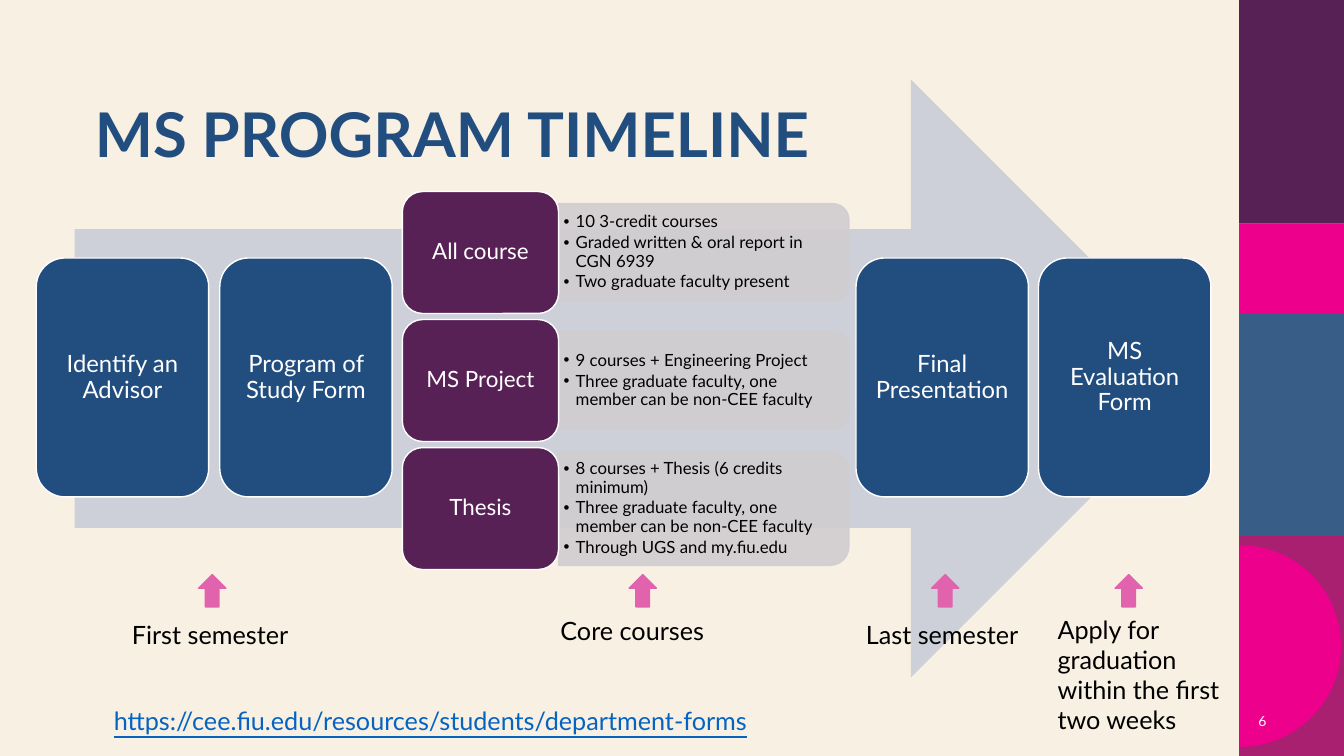
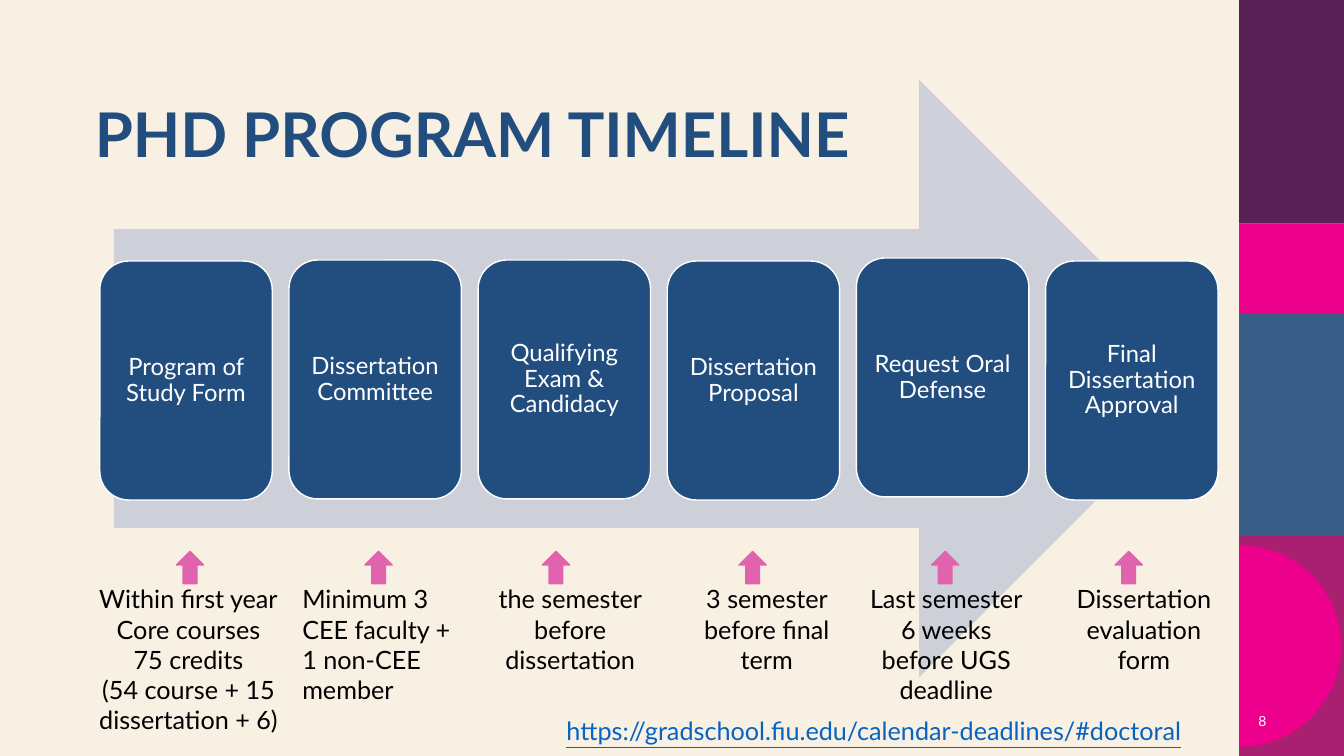
import math
from lxml import etree
from pptx import Presentation
from pptx import util as u
from pptx.dml.color import RGBColor
from pptx.enum import shapes, text
from pptx.oxml.ns import qn

WIDTH, HEIGHT = 13.33, 7.5
FONT = "Lato"
CREAM, NAVY, PLUM, MAGENTA = "F8F0E3", "224E7F", "582156", "EC008C"
STEEL, BERRY, ROSE, MIST = "385E88", "AA2070", "E263AD", "CDD0D8"
STONE, LINK, WHITE, BLACK = "D1CDD1", "0563C1", "FFFFFF", "000000"
LEFT, CENTER, RIGHT = text.PP_ALIGN.LEFT, text.PP_ALIGN.CENTER, text.PP_ALIGN.RIGHT
TOP, MIDDLE = text.MSO_ANCHOR.TOP, text.MSO_ANCHOR.MIDDLE
SHAPE = shapes.MSO_SHAPE
CARD_W, CARD_H = 1.71, 2.37
POINTER_W, POINTER_H = 0.27, 0.32


def color(hex_string):
    return RGBColor.from_string(hex_string)


def paint(part, fill, line=None):
    part.shadow.inherit = False
    part.fill.solid()
    part.fill.fore_color.rgb = color(fill)
    if line:
        part.line.color.rgb = color(line)
        part.line.width = u.Pt(1)
    else:
        part.line.fill.background()
    return part


def add_preset(slide, preset, box, fill, line=None):
    part = slide.shapes.add_shape(preset, *map(u.Inches, box))
    return paint(part, fill, line)


def set_opacity(part, percent):
    for rgb in part.fill._xPr.iter(qn("a:srgbClr")):
        etree.SubElement(rgb, qn("a:alpha")).set("val", str(percent * 1000))


def add_bullet(paragraph, indent):
    properties = paragraph._p.get_or_add_pPr()
    properties.set("marL", str(u.Inches(indent)))
    properties.set("indent", str(-u.Inches(indent)))
    etree.SubElement(properties, qn("a:buFont")).set("typeface", "Arial")
    etree.SubElement(properties, qn("a:buChar")).set("char", "•")


def write(part, lines, size, ink, align=LEFT, anchor=TOP, insets=(0.1, 0.05),
          spacing=1.0, bold=None, underline=None, bullets=False):
    frame = part.text_frame
    frame.word_wrap = True
    frame.auto_size = text.MSO_AUTO_SIZE.NONE
    frame.vertical_anchor = anchor
    frame.margin_left = frame.margin_right = u.Inches(insets[0])
    frame.margin_top = frame.margin_bottom = u.Inches(insets[1])
    frame.text = "\n".join(lines)
    for paragraph in frame.paragraphs:
        paragraph.alignment = align
        paragraph.line_spacing = spacing
        if bullets:
            paragraph.space_after = u.Pt(2)
            add_bullet(paragraph, 0.12)
        font = paragraph.font
        font.name, font.size, font.bold = FONT, u.Pt(size), bold
        font.underline = underline
        font.color.rgb = color(ink)


def add_text(slide, box, lines, size, ink, **style):
    part = slide.shapes.add_textbox(*map(u.Inches, box))
    write(part, lines, size, ink, **style)


def add_sidebar(slide, box, number):
    left, top, width, height = box
    bands = [(0.704, 0.296, BERRY), (0.413, 0.296, STEEL),
             (0, 0.296, PLUM), (0.296, 0.118, MAGENTA)]
    for start, share, fill in bands:
        add_preset(slide, SHAPE.RECTANGLE,
                   (left, top + start * height, width, share * height), fill)
    radius, middle = 1, top + height - 1.09
    angles = [math.pi * (step / 60 - 0.5) for step in range(61)]
    arc = [(u.Inches(left + 0.01 + radius * math.cos(a)),
            u.Inches(middle + radius * math.sin(a))) for a in angles]
    outline = slide.shapes.build_freeform(*arc[0])
    outline.add_line_segments(arc[1:], close=True)
    paint(outline.convert_to_shape(), MAGENTA)
    add_text(slide, (left - 0.13, top + height - 0.55, 0.5, 0.4), [number],
             10, WHITE, align=RIGHT, anchor=MIDDLE)


def start_slide(deck, heading, number):
    slide = deck.slides.add_slide(deck.slide_layouts[5])
    add_sidebar(slide, (12.29, 0, WIDTH - 12.29, HEIGHT), number)
    title = slide.shapes.title
    title.left, title.top, title.width, title.height = map(
        u.Inches, (0.84, 0.98, 10.27, 0.79))
    write(title, [heading], 44, NAVY, spacing=0.9, bold=True)
    return slide


def add_cards(slide, cards):
    for left, top, label in cards:
        card = add_preset(slide, SHAPE.ROUNDED_RECTANGLE,
                          (left, top, CARD_W, CARD_H), NAVY, WHITE)
        write(card, [label], 17, WHITE, align=CENTER, anchor=MIDDLE,
              insets=(0.07, 0.07), spacing=0.9)


def add_tracks(slide, box, tracks):
    left, top, width, height = box
    gap = 0.06
    row = (height - gap * (len(tracks) - 1)) / len(tracks)
    label_w = 1.55
    panel_w = width - label_w
    for index, (name, details, panel_h) in enumerate(tracks):
        y = top + index * (row + gap)
        center_x = left + label_w + panel_w / 2
        center_y = y + row / 2
        panel = add_preset(slide, SHAPE.ROUND_2_SAME_RECTANGLE,
                           (center_x - panel_h / 2, center_y - panel_w / 2,
                            panel_h, panel_w), STONE, STONE)
        panel.rotation = 90
        set_opacity(panel, 90)
        add_text(slide, (left + label_w, center_y - panel_h / 2,
                         panel_w - 0.05, panel_h), details, 12, BLACK,
                 anchor=MIDDLE, insets=(0.05, 0.03), spacing=0.9, bullets=True)
        label = add_preset(slide, SHAPE.ROUNDED_RECTANGLE,
                           (left, y, label_w, row), PLUM, WHITE)
        write(label, [name], 16, WHITE, align=CENTER, anchor=MIDDLE,
              insets=(0.07, 0.03), spacing=0.9)


def add_milestones(slide, pointer_top, milestones):
    for pointer_left, box, align, lines in milestones:
        add_preset(slide, SHAPE.UP_ARROW,
                   (pointer_left, pointer_top, POINTER_W, POINTER_H), ROSE, ROSE)
        add_text(slide, box, lines, 18, BLACK, align=align)


def add_link(slide, box, address):
    add_text(slide, box, [address], 18, LINK, underline=True)


def build_ms(deck):
    slide = start_slide(deck, "MS PROGRAM TIMELINE", "6")
    add_link(slide, (1.03, 6.95, 6.81, 0.4),
             "https://cee.fiu.edu/resources/students/department-forms")
    add_preset(slide, SHAPE.RIGHT_ARROW, (0.74, 0.79, 11.26, 5.93), MIST)
    add_cards(slide, [
        (0.36, 2.56, "Identify an Advisor"),
        (2.18, 2.56, "Program of Study Form"),
        (8.49, 2.56, "Final Presentation"),
        (10.3, 2.56, "MS Evaluation Form"),
    ])
    committee = "Three graduate faculty, one member can be non-CEE faculty"
    add_tracks(slide, (3.99, 1.9, 4.43, 3.75), [
        ("All course", ["10 3-credit courses",
                        "Graded written & oral report in CGN 6939",
                        "Two graduate faculty present"], 0.97),
        ("MS Project", ["9 courses + Engineering Project", committee], 0.97),
        ("Thesis", ["8 courses + Thesis (6 credits minimum)", committee,
                    "Through UGS and my.fiu.edu"], 1.13),
    ])
    add_milestones(slide, 5.7, [
        (1.97, (1.21, 6.09, 1.79, 0.4), LEFT, ["First semester"]),
        (6.24, (5.46, 6.06, 1.82, 0.4), LEFT, ["Core courses"]),
        (9.24, (8.49, 6.09, 1.79, 0.4), LEFT, ["Last semester"]),
        (11.06, (10.39, 6.04, 1.91, 1.31), LEFT,
         ["Apply for graduation within the first two weeks"]),
    ])


def build_phd(deck):
    slide = start_slide(deck, "PHD PROGRAM TIMELINE", "8")
    add_preset(slide, SHAPE.RIGHT_ARROW, (1.13, 0.79, 10.95, 5.93), MIST)
    steps = [(2.59, "Program of Study Form"), (2.58, "Dissertation Committee"),
             (2.58, "Qualifying Exam & Candidacy"), (2.59, "Dissertation Proposal"),
             (2.56, "Request Oral Defense"), (2.59, "Final Dissertation Approval")]
    pitch = (10.37 - 0.99) / (len(steps) - 1)
    add_cards(slide, [(0.99 + index * pitch, top, label)
                      for index, (top, label) in enumerate(steps)])
    add_milestones(slide, 5.47, [
        (1.75, (0.84, 5.74, 2.06, 1.62), CENTER,
         ["Within first year", "Core courses", "75 credits",
          "(54 course + 15 dissertation + 6)"]),
        (3.62, (2.9, 5.74, 1.74, 1.31), LEFT,
         ["Minimum 3 CEE faculty + 1 non-CEE member"]),
        (5.38, (4.76, 5.74, 1.79, 1.01), CENTER,
         ["the semester before dissertation"]),
        (7.33, (6.71, 5.74, 1.79, 1.01), CENTER,
         ["3 semester before final term"]),
        (9.24, (8.49, 5.74, 1.79, 1.31), CENTER,
         ["Last semester", "6 weeks before UGS deadline"]),
        (11.06, (10.39, 5.74, 1.91, 1.01), CENTER,
         ["Dissertation evaluation form"]),
    ])
    add_link(slide, (5.52, 7.05, 6.7, 0.4),
             "https://gradschool.fiu.edu/calendar-deadlines/#doctoral")


def main():
    deck = Presentation()
    deck.slide_width, deck.slide_height = u.Inches(WIDTH), u.Inches(HEIGHT)
    backdrop = deck.slide_master.background.fill
    backdrop.solid()
    backdrop.fore_color.rgb = color(CREAM)
    build_ms(deck)
    build_phd(deck)
    deck.save("out.pptx")


if __name__ == "__main__":
    main()
